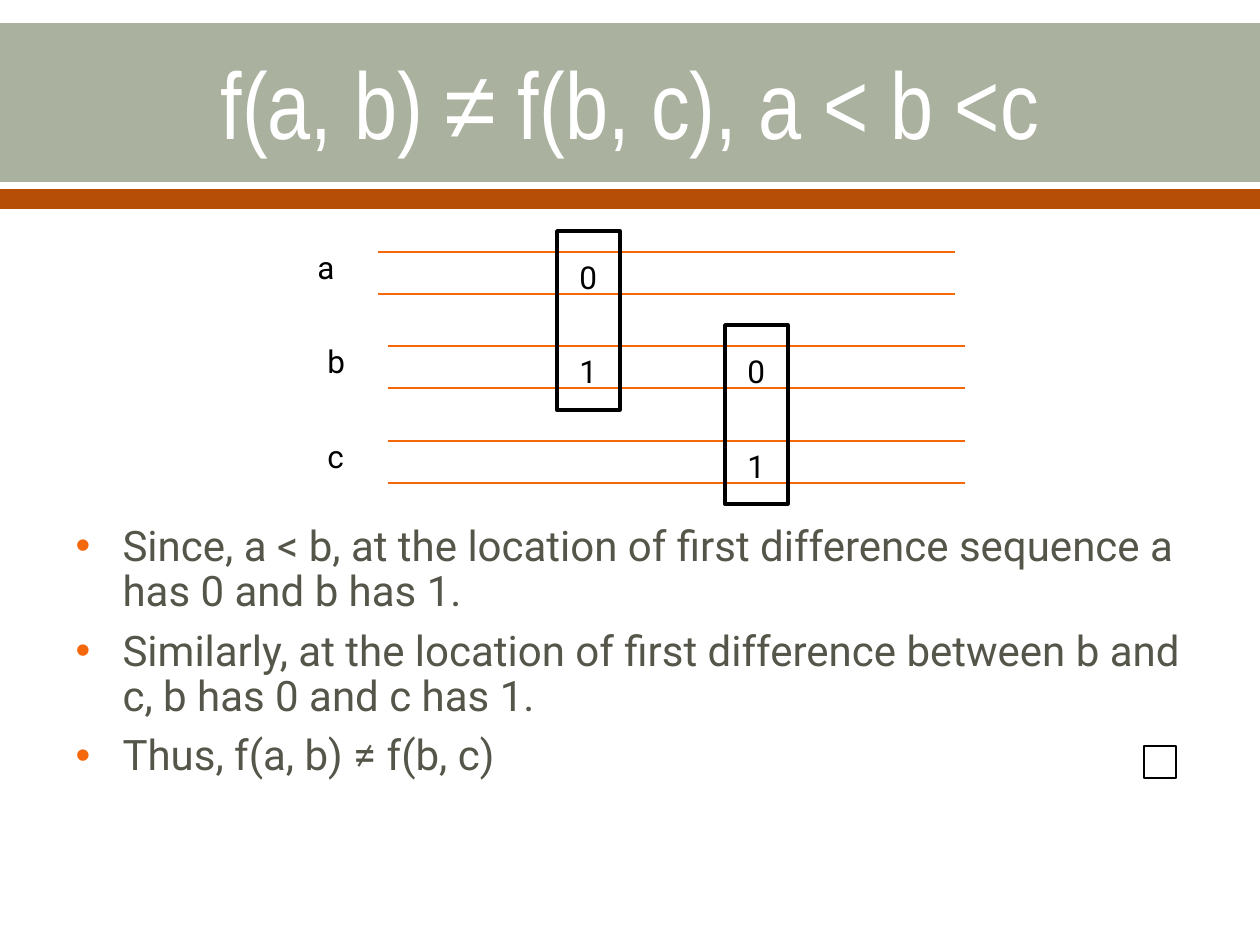
from lxml.etree import SubElement
from pptx import Presentation
from pptx.dml.color import RGBColor
from pptx.enum.shapes import MSO_CONNECTOR, MSO_SHAPE
from pptx.enum.text import MSO_ANCHOR, MSO_AUTO_SIZE, PP_ALIGN
from pptx.oxml.ns import qn
from pptx.util import Emu, Pt

WHITE = RGBColor(0xFF, 0xFF, 0xFF)
BLACK = RGBColor(0, 0, 0)
SAGE = RGBColor(0xAB, 0xB1, 0x9F)
RUST = RGBColor(0xB7, 0x4E, 0x08)
ORANGE = RGBColor(0xF4, 0x68, 0x0B)
OLIVE = RGBColor(0x55, 0x55, 0x4A)


def px(*lengths):
    return [Emu(round(n * 914400 / 126)) for n in lengths]


def add_box(kind, place, fill=None, line=None, width=1):
    box = s.shapes.add_shape(kind, *px(*place))
    box.shadow.inherit = False
    if fill is None:
        box.fill.background()
    else:
        box.fill.solid()
        box.fill.fore_color.rgb = fill
    if line is None:
        box.line.fill.background()
    else:
        box.line.color.rgb = line
        box.line.width = Pt(width)
    return box


prs = Presentation()
prs.slide_width, prs.slide_height = px(1260, 945)
s = prs.slides.add_slide(prs.slide_layouts[1])
title, body = s.placeholders

# Title bands, behind the placeholders
for place, color in [((0, 23, 1260, 159), SAGE), ((0, 189, 1260, 20), RUST)]:
    band = add_box(MSO_SHAPE.RECTANGLE, place, color)
    title._element.addprevious(band._element)

# Title
title.left, title.top, title.width, title.height = px(63, 25, 1134, 154)
tf = title.text_frame
tf.text = "f(a, b) ≠ f(b, c), a < b <c"
tf.auto_size = MSO_AUTO_SIZE.NONE
tf.vertical_anchor = MSO_ANCHOR.MIDDLE
p = tf.paragraphs[0]
p.alignment = PP_ALIGN.CENTER
r = p.runs[0]
r.font.size = Pt(54)
r.font.name = "Arial Narrow"
r.font.color.rgb = WHITE

# Argument, below the diagram
body.left, body.top, body.width, body.height = px(63, 519, 1134, 325)
tf = body.text_frame
tf.text = "\n".join([
    "Since, a < b, at the location of first difference sequence a has 0 and b has 1.",
    "Similarly, at the location of first difference between b and c, b has 0 and c has 1.",
    "Thus, f(a, b) ≠ f(b, c)",
])
tf.auto_size = MSO_AUTO_SIZE.NONE
for p in tf.paragraphs:
    p.line_spacing = 0.9
    p.space_before = Pt(0)
    p.space_after = Pt(8)
    pPr = p._p.get_or_add_pPr()
    indent = px(47)[0]
    pPr.set("marL", str(indent))
    pPr.set("indent", str(-indent))
    SubElement(SubElement(pPr, qn("a:buClr")), qn("a:srgbClr")).set("val", str(ORANGE))
    SubElement(pPr, qn("a:buFont")).set("typeface", "Arial")
    SubElement(pPr, qn("a:buChar")).set("char", "•")
    r = p.runs[0]
    r.font.size = Pt(24)
    r.font.name = "Roboto"
    r.font.color.rgb = OLIVE

# Sequences: a pair of lines each
for x, y in [(378, 252), (388, 346), (388, 441)]:
    for line_y in (y, y + 42):
        line = s.shapes.add_connector(MSO_CONNECTOR.STRAIGHT, *px(x, line_y, x + 577, line_y))
        line.line.color.rgb = ORANGE
        line.line.width = Pt(0.79)
        SubElement(line._element.spPr, qn("a:effectLst"))

# Sequence names and differing bits
labels = [
    ("a", 305, 242, 42), ("b", 315, 336, 42), ("c", 315, 431, 42),
    ("0", 567, 252, 32), ("1", 567, 346, 32),
    ("0", 735, 346, 32), ("1", 735, 441, 32),
]
for text, x, y, width in labels:
    tf = s.shapes.add_textbox(*px(x, y, width, 50)).text_frame
    tf.word_wrap = True
    tf.auto_size = MSO_AUTO_SIZE.SHAPE_TO_FIT_TEXT
    tf.text = text
    r = tf.paragraphs[0].runs[0]
    r.font.size = Pt(18)
    r.font.name = "Roboto"
    r.font.color.rgb = BLACK

# Frames around the first differences
for x, y in [(557, 231), (725, 325)]:
    add_box(MSO_SHAPE.RECTANGLE, (x, y, 63, 179), line=BLACK, width=2)

# End-of-proof square
add_box(MSO_SHAPE.FLOWCHART_PROCESS, (1144, 746, 32, 32), WHITE, BLACK)

prs.save("out.pptx")
